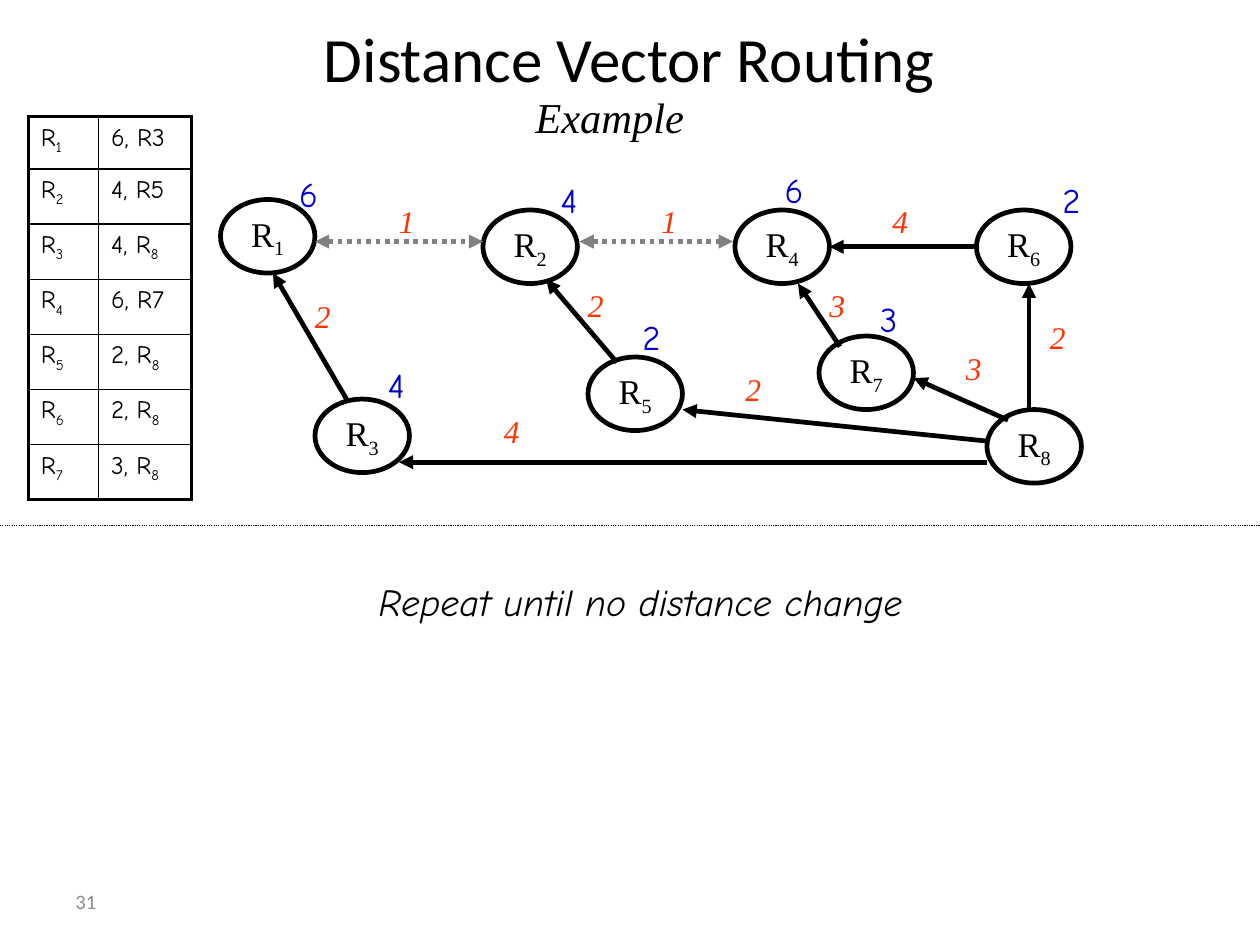
from lxml.etree import SubElement
from pptx import Presentation
from pptx.dml.color import RGBColor
from pptx.enum.dml import MSO_LINE
from pptx.enum.shapes import MSO_CONNECTOR, MSO_SHAPE
from pptx.enum.text import MSO_ANCHOR as ANCHOR, MSO_AUTO_SIZE as AUTO, PP_ALIGN as ALIGN
from pptx.oxml.ns import qn
from pptx.util import Inches, Pt

# Type styles: font, size, colour, italic
THEME = {
    "ink": "000000", "paper": "FFFFFF", "exchange": "808080",
    "title": ("Calibri", 40, "000000", False),
    "subtitle": ("Times New Roman", 27, "000000", True),
    "router": ("Times New Roman", 22, "000000", False),
    "cost": ("Times New Roman", 20, "FF3300", True),
    "distance": ("Comic Neue", 22, "0000CC", False),
    "entry": ("Comic Neue", 16, "000000", False),
    "remark": ("Comic Neue", 24, "000000", True),
    "number": ("Calibri", 13, "8C8C8C", False),
}
INK = RGBColor.from_string(THEME["ink"])
PAPER = RGBColor.from_string(THEME["paper"])
EXCHANGE = RGBColor.from_string(THEME["exchange"])

deck = Presentation()
deck.slide_width, deck.slide_height = Inches(11.11), Inches(8.33)
slide = deck.slides.add_slide(deck.slide_layouts[6])
shapes = slide.shapes
COLUMNS = 120  # square grid: 120 columns by 90 rows
UNIT = deck.slide_width / COLUMNS


def grid(*steps):
    """Turn grid steps into slide lengths."""
    return [round(step * UNIT) for step in steps]


def write(frame, text, style, align=ALIGN.LEFT):
    """Write text in a theme style; an underscore starts a subscript."""
    font_name, size, colour, italic = THEME[style]
    frame.margin_left = frame.margin_right = Inches(0.11)
    frame.margin_top = frame.margin_bottom = Inches(0.06)
    paragraph = frame.paragraphs[0]
    paragraph.alignment = align
    for position, part in enumerate(text.split("_")):
        run = paragraph.add_run()
        run.text = part
        run.font.name, run.font.size = font_name, Pt(size)
        run.font.italic, run.font.bold = italic, False
        run.font.color.rgb = RGBColor.from_string(colour)
        if position:
            run.font._element.set("baseline", "-25000")


# Routers
routers = {5: (56, 34), 3: (30, 38), 7: (78, 32), 8: (94, 39),
           6: (93, 20), 4: (70, 20), 2: (46, 20), 1: (21, 19)}
for number, corner in routers.items():
    router = shapes.add_shape(MSO_SHAPE.OVAL, *grid(*corner, 9, 7))
    router.shadow.inherit = False
    router.fill.solid()
    router.fill.fore_color.rgb = PAPER
    router.line.color.rgb, router.line.width = INK, Pt(3)
    router.text_frame.word_wrap = False
    router.text_frame.vertical_anchor = ANCHOR.MIDDLE
    write(router.text_frame, f"R_{number}", "router", ALIGN.CENTER)

# Links: ends, colour, width, dash, arrowheads
route = (INK, 3, None, ["tailEnd"])
exchange = (EXCHANGE, 3, MSO_LINE.ROUND_DOT, ["headEnd", "tailEnd"])
divider = (INK, 0.75, MSO_LINE.ROUND_DOT, [])
links = [
    ((30, 23, 46, 23), exchange), ((55.2, 23, 69.8, 23), exchange),
    ((33, 38, 26, 26), route), ((80, 33, 76, 27), route),
    ((94, 44, 38, 44), route), ((94, 42, 65, 39), route),
    ((96, 40, 87, 36), route), ((98, 39, 98, 27), route),
    ((93, 23.5, 79, 23.5), route), ((58.75, 34.5, 52, 26.6), route),
    ((0, 50, COLUMNS, 50), divider),
]
for ends, (colour, width, dash, arrowheads) in links:
    link = shapes.add_connector(MSO_CONNECTOR.STRAIGHT, *grid(*ends))
    link.line.color.rgb, link.line.width = colour, Pt(width)
    if dash:
        link.line.dash_style = dash
    properties = link.element.spPr
    for end in arrowheads:
        SubElement(properties.find(qn("a:ln")), qn(f"a:{end}"), type="triangle")
    SubElement(properties, qn("a:effectLst"))

# Link costs and current distances
costs = [(37, 19, 1), (62, 19, 1), (84, 19, 4), (99, 30, 2), (47, 39, 4),
         (29, 28, 2), (55, 27, 2), (78, 27, 3), (70, 35, 2), (91, 33, 3)]
distances = [(35.75, 34, 4), (60, 29.4, 2), (82.6, 27.75, 3), (100, 16.4, 2),
             (27.3, 15.8, 6), (52.2, 16.4, 4), (73.55, 15.45, 6)]
labels = [((x - 0.2, y - 0.4, 3.9, 4.9), str(cost), "cost", ALIGN.LEFT, ANCHOR.TOP)
          for x, y, cost in costs]
labels += [((x, y, 5.95, 5.2), str(distance), "distance", ALIGN.LEFT, ANCHOR.TOP)
           for x, y, distance in distances]
labels += [
    ((5.6, -2, 108.6, 15), "Distance Vector Routing", "title", ALIGN.CENTER, ANCHOR.MIDDLE),
    ((49.8, 8, 21.2, 6.2), "Example", "subtitle", ALIGN.LEFT, ANCHOR.TOP),
    ((8.1, 54.4, 105.8, 5.6), "Repeat until no distance change", "remark",
     ALIGN.CENTER, ANCHOR.TOP),
    ((6, 83.4, 28, 4.8), "31", "number", ALIGN.LEFT, ANCHOR.MIDDLE),
]
for place, text, style, align, anchor in labels:
    frame = shapes.add_textbox(*grid(*place)).text_frame
    frame.word_wrap = style != "cost"
    frame.vertical_anchor = anchor
    if anchor == ANCHOR.TOP:
        frame.auto_size = AUTO.SHAPE_TO_FIT_TEXT
    write(frame, text, style, align)

# Routing table: distance and next hop for R1 to R7
hops = ["6, R3", "4, R5", "4, R_8", "6, R7", "2, R_8", "2, R_8", "3, R_8"]
column_widths = grid(6.7, 8.85)
row_heights = grid(5, *[5.25] * 6)
routing = shapes.add_table(len(hops), 2, *grid(2.7, 11.1),
                           sum(column_widths), sum(row_heights)).table
routing.first_row = routing.horz_banding = False
for column, width in zip(routing.columns, column_widths):
    column.width = width
for row, height in zip(routing.rows, row_heights):
    row.height = height
for r, hop in enumerate(hops):
    for c, entry in enumerate([f"R_{r + 1}", hop]):
        cell = routing.cell(r, c)
        write(cell.text_frame, entry, "entry")
        cell_properties = cell._tc.get_or_add_tcPr()
        outer_sides = {"L": c == 0, "R": c == 1, "T": r == 0, "B": r == len(hops) - 1}
        for side, outer in outer_sides.items():
            border = SubElement(cell_properties, qn(f"a:ln{side}"),
                                w=str(Pt(2.25 if outer else 1)))
            SubElement(SubElement(border, qn("a:solidFill")), qn("a:srgbClr"),
                       val=THEME["ink"])
        cell.fill.background()
        cell.margin_left = cell.margin_right = Inches(0.11)
        cell.margin_top = cell.margin_bottom = Inches(0.06)

deck.save("out.pptx")
